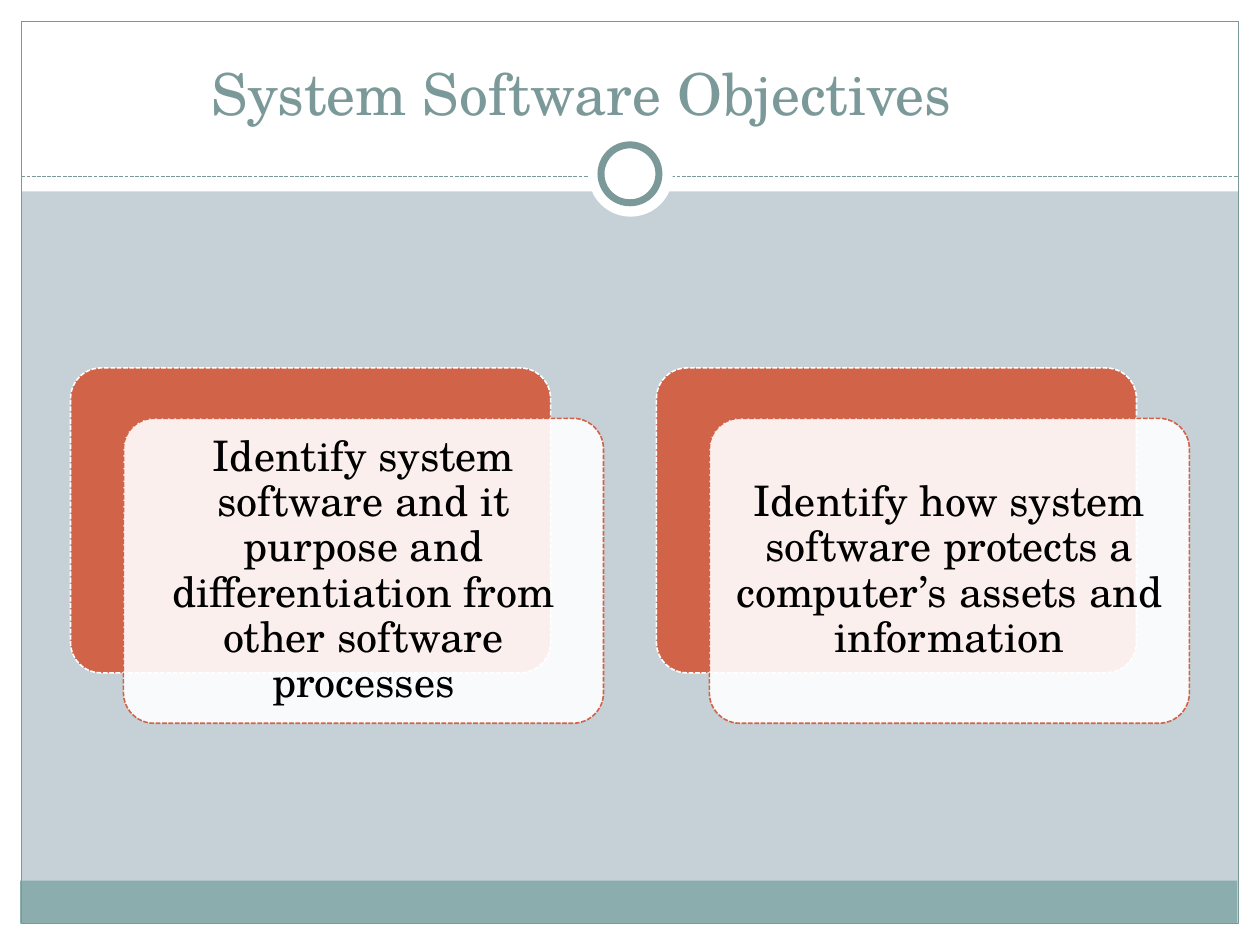
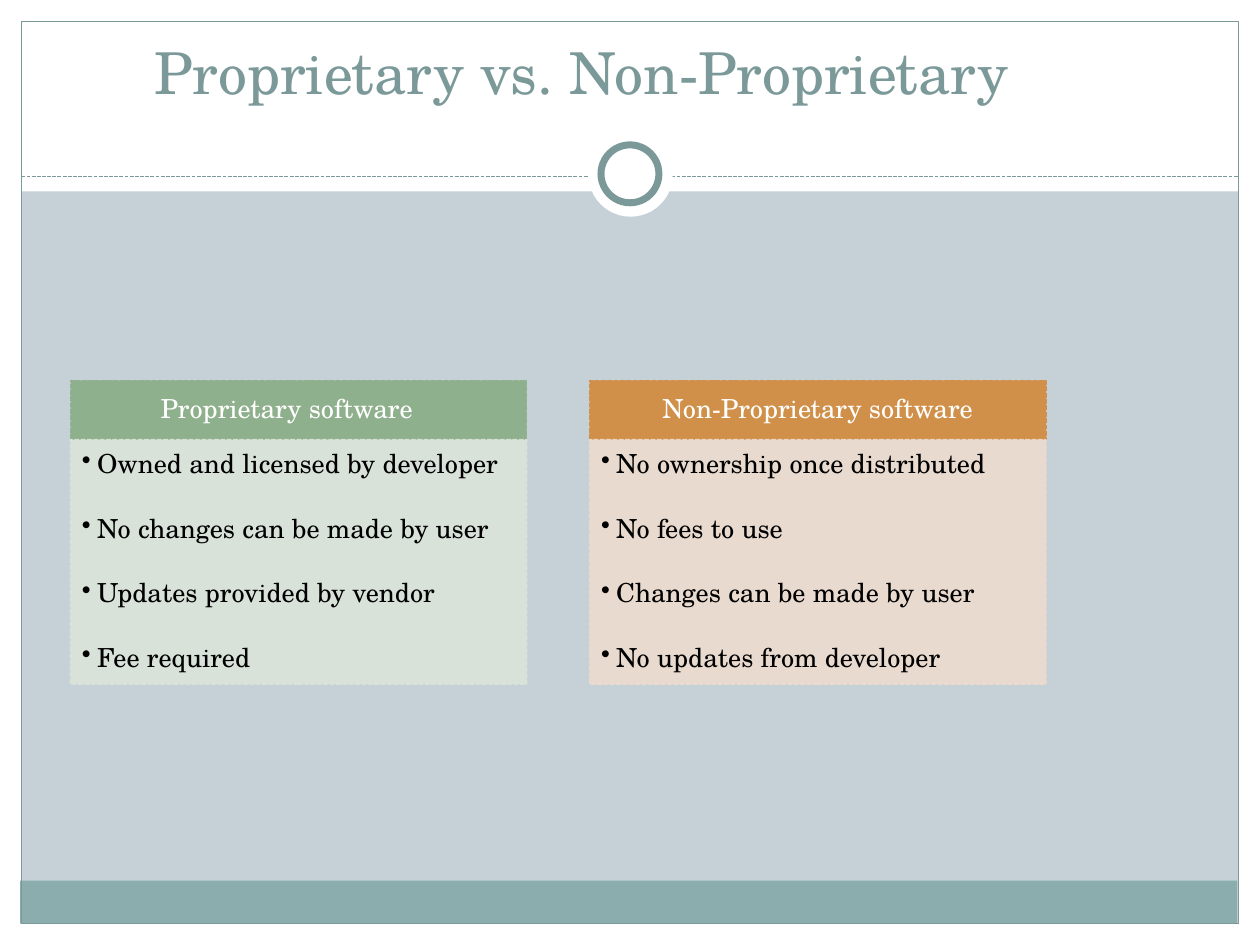
from dataclasses import dataclass

from lxml.etree import SubElement
from pptx import Presentation
from pptx.dml.color import RGBColor
from pptx.enum.dml import MSO_LINE_DASH_STYLE as DASH
from pptx.enum.shapes import MSO_CONNECTOR as CONN, MSO_SHAPE as SHAPE
from pptx.enum.text import MSO_ANCHOR as ANCHOR, PP_ALIGN as ALIGN
from pptx.oxml.ns import qn
from pptx.util import Inches, Pt

FONT = "TeX Gyre Schola"
WHITE, BLACK, TEAL = "FFFFFF", "000000", "7C999A"
BACKGROUND, FOOTER, RUST = "C5D1D7", "8CADAE", "D16349"
EDGE = 0.17
SIDES = ("margin_left", "margin_top", "margin_right", "margin_bottom")


@dataclass(frozen=True)
class Box:
    """Outline, place and colours of one shape."""

    x: float
    y: float
    w: float
    h: float
    fill: str | None = None
    line: str | None = None
    weight: float = 0.75
    dashed: bool = False
    kind: SHAPE = SHAPE.RECTANGLE
    fill_alpha: int = 100
    line_alpha: int = 100


@dataclass(frozen=True)
class TextStyle:
    """Size, colour and layout of a block of text."""

    size: float
    color: str
    insets: tuple[float, float, float, float] = (0.1, 0.1, 0.1, 0.1)
    anchor: ANCHOR = ANCHOR.MIDDLE
    align: ALIGN = ALIGN.CENTER
    spacing: float = 0.9
    after: float = 0
    bulleted: bool = False


@dataclass(frozen=True)
class Column:
    """One side of the software comparison."""

    heading: str
    points: tuple[str, ...]
    head_fill: str
    body_fill: str
    head_right: float = 0.12


FRAME = (
    Box(0, 7.5 - EDGE, 10, EDGE, WHITE),
    Box(0, 0, 10, 1.52, WHITE),
    Box(0, 0, EDGE, 7.5, WHITE),
    Box(10 - EDGE, 0, EDGE, 7.5, WHITE),
    Box(0.16, 6.99, 9.66, 0.34, FOOTER),
    Box(EDGE, EDGE, 9.66, 7.16, line=TEAL),
)
RINGS = (
    Box(4.67, 1.05, 0.67, 0.67, WHITE, kind=SHAPE.OVAL),
    Box(4.77, 1.15, 0.46, 0.46, WHITE, TEAL, 4, kind=SHAPE.OVAL),
)
TITLE = TextStyle(33, TEAL, (0.1, 0.05, 0.1, 0.05), ANCHOR.BOTTOM, spacing=1)
CARD = TextStyle(24, BLACK)
POINTS = TextStyle(15, BLACK, (0.09, 0.09, 0.12, 0.13), ANCHOR.TOP, ALIGN.LEFT,
                   after=20.7, bulleted=True)
OBJECTIVES = (
    "Identify system software and it purpose and differentiation from other software processes",
    "Identify how system software protects a computer’s assets and information",
)
COLUMNS = (
    Column("Proprietary software",
           ("Owned and licensed by developer", "No changes can be made by user",
            "Updates provided by vendor", "Fee required"),
           "8FB08C", "DBE4DA", head_right=0.31),
    Column("Non-Proprietary software",
           ("No ownership once distributed", "No fees to use",
            "Changes can be made by user", "No updates from developer"),
           "D19049", "EEDBCF"),
)


def rgb(color: str) -> RGBColor:
    """Turn a hex string into a colour."""
    return RGBColor.from_string(color)


def apply(target, values: dict) -> None:
    """Set each named value on the target."""
    for name, value in values.items():
        setattr(target, name, value)


def style_line(line, color: str, weight: float, dashed: bool) -> None:
    """Give a line its colour, weight and dash."""
    line.color.rgb = rgb(color)
    line.width = Pt(weight)
    if dashed:
        line.dash_style = DASH.SQUARE_DOT


def draw(slide, box: Box):
    """Draw one box and return its shape."""
    s = slide.shapes.add_shape(box.kind, *map(Inches, (box.x, box.y, box.w, box.h)))
    s.shadow.inherit = False
    if box.kind == SHAPE.ROUNDED_RECTANGLE:
        s.adjustments[0] = 0.1
    if box.fill:
        s.fill.solid()
        s.fill.fore_color.rgb = rgb(box.fill)
    else:
        s.fill.background()
    if box.line:
        style_line(s.line, box.line, box.weight, box.dashed)
    else:
        s.line.fill.background()
    colors = s._element.spPr.iter(qn("a:srgbClr"))
    for color, alpha in zip(colors, (box.fill_alpha, box.line_alpha)):
        if alpha < 100:
            SubElement(color, qn("a:alpha")).set("val", str(alpha * 1000))
    return s


def write(s, paragraphs: tuple[str, ...], style: TextStyle, right: float | None = None) -> None:
    """Fill a shape with styled paragraphs."""
    tf = s.text_frame
    apply(tf, {"word_wrap": True, "vertical_anchor": style.anchor})
    apply(tf, dict(zip(SIDES, map(Inches, style.insets))))
    if right is not None:
        tf.margin_right = Inches(right)
    for i, text in enumerate(paragraphs):
        p = tf.add_paragraph() if i else tf.paragraphs[0]
        apply(p, {"alignment": style.align, "line_spacing": style.spacing,
                  "space_after": Pt(style.after)})
        if style.bulleted:
            pPr = p._p.get_or_add_pPr()
            pPr.set("marL", str(Inches(0.12)))
            pPr.set("indent", str(Inches(-0.12)))
            SubElement(pPr, qn("a:buChar")).set("char", "•")
        r = p.add_run()
        r.text = text
        apply(r.font, {"name": FONT, "size": Pt(style.size)})
        r.font.color.rgb = rgb(style.color)


def add_slide(prs, title: str, title_top: float):
    """Add a slide with the shared frame and its title."""
    slide = prs.slides.add_slide(prs.slide_layouts[6])
    slide.background.fill.solid()
    slide.background.fill.fore_color.rgb = rgb(BACKGROUND)
    for box in FRAME:
        draw(slide, box)
    rule = slide.shapes.add_connector(
        CONN.STRAIGHT, *map(Inches, (EDGE, 1.4, 10 - EDGE, 1.4)))
    style_line(rule.line, TEAL, 0.75, True)
    SubElement(rule._element.spPr, qn("a:effectLst"))
    for ring in RINGS:
        draw(slide, ring)
    s = slide.shapes.add_textbox(*map(Inches, (0.67, title_top, 7.89, 0.89)))
    write(s, (title,), TITLE)
    return slide


def add_objectives(prs) -> None:
    """Build the slide of layered objective cards."""
    slide = add_slide(prs, "System Software Objectives", EDGE)
    for i, objective in enumerate(OBJECTIVES):
        x, y, w, h = 0.56 + i * 4.65, 2.92, 3.81, 2.42
        draw(slide, Box(x, y, w, h, RUST, WHITE, 0.9, True, SHAPE.ROUNDED_RECTANGLE))
        card = draw(slide, Box(x + 0.42, y + 0.4, w, h, WHITE, RUST, 0.9, True,
                               SHAPE.ROUNDED_RECTANGLE, fill_alpha=90))
        write(card, (objective,), CARD)


def add_comparison(prs) -> None:
    """Build the slide that compares the two kinds of software."""
    slide = add_slide(prs, "Proprietary vs. Non-Proprietary", 0)
    heading = TextStyle(15, WHITE, (0.12, 0.07, 0.12, 0.07))
    for i, col in enumerate(COLUMNS):
        x, y, w, head_h = 0.56 + i * 4.12, 3.02, 3.62, 0.47
        head = draw(slide, Box(x, y, w, head_h, col.head_fill, col.head_fill, 0.9, True))
        write(head, (col.heading,), heading, col.head_right)
        body = draw(slide, Box(x, y + head_h, w, 1.94, col.body_fill, col.body_fill,
                               0.9, True, fill_alpha=90, line_alpha=90))
        write(body, col.points, POINTS)


def main() -> None:
    """Build and save the presentation."""
    prs = Presentation()
    apply(prs, {"slide_width": Inches(10), "slide_height": Inches(7.5)})
    add_objectives(prs)
    add_comparison(prs)
    prs.save("out.pptx")


if __name__ == "__main__":
    main()
